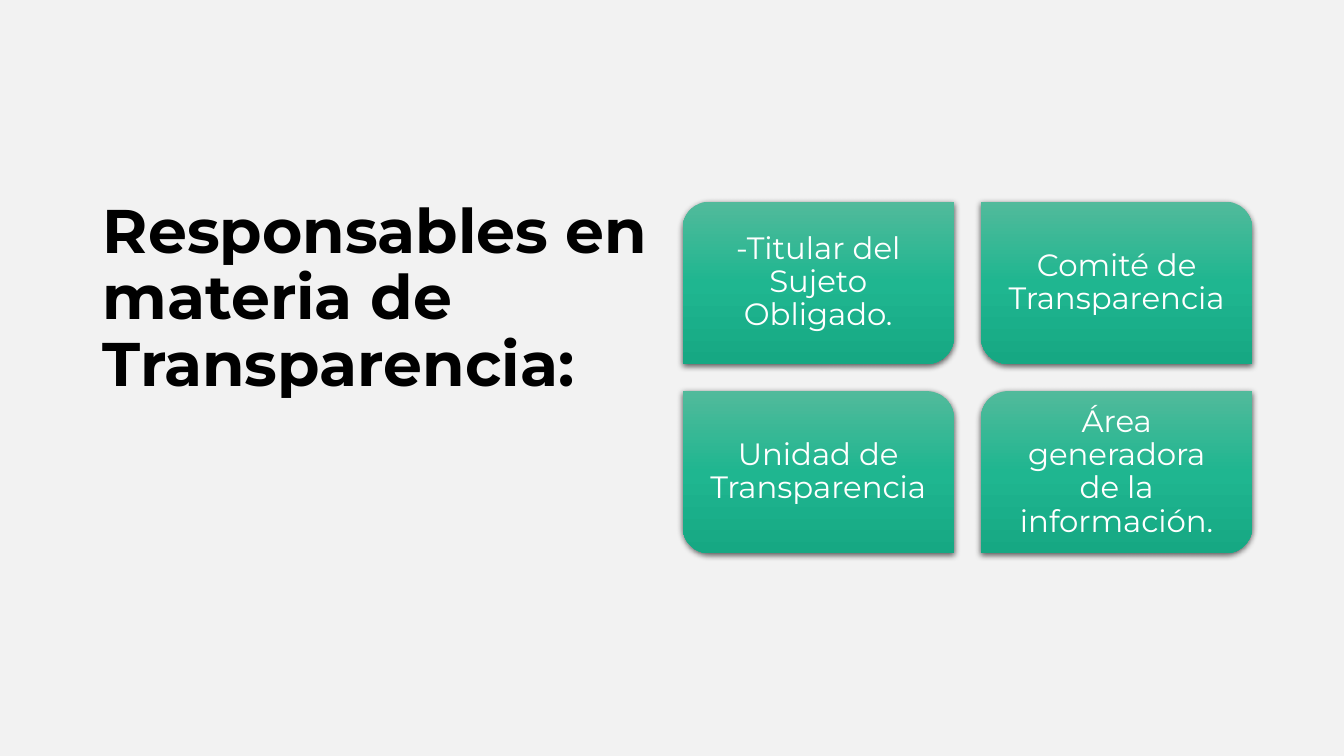
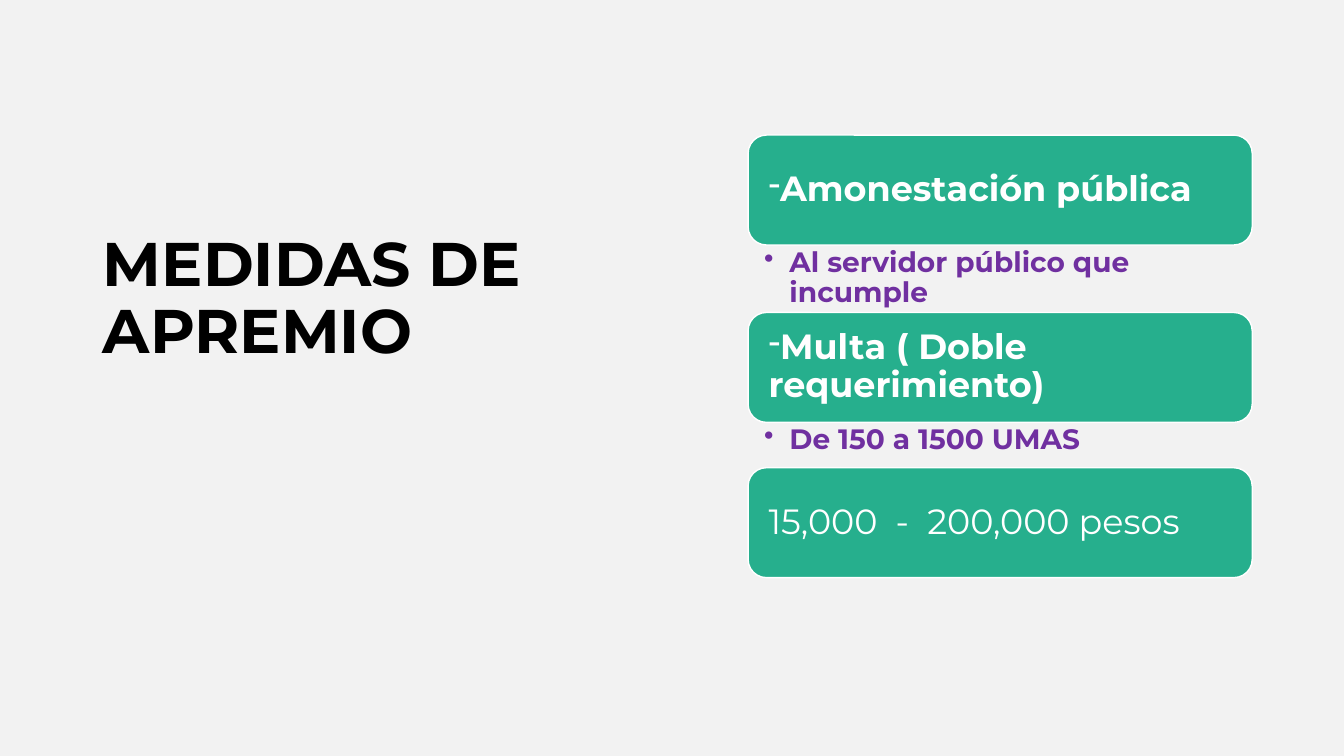
import dataclasses

import lxml.etree
import pptx
import pptx.dml.color
import pptx.enum.shapes
import pptx.enum.text
import pptx.oxml.ns
import pptx.util

Inches = pptx.util.Inches
ALIGN = pptx.enum.text.PP_ALIGN
ANCHOR = pptx.enum.text.MSO_ANCHOR
SHAPE = pptx.enum.shapes.MSO_SHAPE
qn = pptx.oxml.ns.qn


@dataclasses.dataclass(frozen=True)
class Theme:
    font: str = "Montserrat"
    back: str = "F2F2F2"
    ink: str = "000000"
    white: str = "FFFFFF"
    green: str = "26AF8D"
    note: str = "7030A0"
    fade: tuple = ((0, "51BA9B"), (50, "1FB690"), (100, "16A883"))
    title_size: int = 44
    tile_size: int = 22
    card_size: int = 25
    note_size: int = 20
    leading: float = 0.9


@dataclasses.dataclass(frozen=True)
class Box:
    left: float
    top: float
    width: float
    height: float

    def place(self):
        return [Inches(n) for n in (self.left, self.top, self.width, self.height)]


THEME = Theme()
TITLE_BOX = Box(0.92, 1.89, 5.65, 2.17)


def rgb(code):
    return pptx.dml.color.RGBColor.from_string(code)


# Text
def write(shape, text, size, color, bold=False, align=ALIGN.LEFT,
          anchor=ANCHOR.MIDDLE, inset=(0.1, 0.05, 0.1, 0.05), bullet=None, hang=0):
    frame = shape.text_frame
    frame.word_wrap = True
    frame.auto_size = pptx.enum.text.MSO_AUTO_SIZE.NONE
    frame.vertical_anchor = anchor
    (frame.margin_left, frame.margin_top,
     frame.margin_right, frame.margin_bottom) = [Inches(n) for n in inset]
    para = frame.paragraphs[0]
    para.alignment = align
    para.line_spacing = THEME.leading
    if bullet:
        props = para._p.get_or_add_pPr()
        props.set("marL", str(Inches(hang)))
        props.set("indent", str(-Inches(hang)))
        lxml.etree.SubElement(props, qn("a:buChar"), char=bullet)
    run = para.add_run()
    run.text = text
    run.font.name = THEME.font
    run.font.size = pptx.util.Pt(size)
    run.font.bold = bold
    run.font.color.rgb = rgb(color)


# Gradient and shadow of a tile
def tint(parent, code):
    return lxml.etree.SubElement(parent, qn("a:srgbClr"), val=code)


def fade(shape):
    grad = lxml.etree.Element(qn("a:gradFill"), rotWithShape="1")
    stops = lxml.etree.SubElement(grad, qn("a:gsLst"))
    for point, code in THEME.fade:
        tint(lxml.etree.SubElement(stops, qn("a:gs"), pos=str(point * 1000)), code)
    lxml.etree.SubElement(grad, qn("a:lin"), ang="5400000", scaled="0")
    shape._element.spPr.find(qn("a:prstGeom")).addnext(grad)


def shade(shape):
    shape.shadow.inherit = False
    effects = shape._element.spPr.find(qn("a:effectLst"))
    outer = lxml.etree.SubElement(
        effects, qn("a:outerShdw"), blurRad=str(pptx.util.Pt(4.5)),
        dist=str(pptx.util.Pt(1.5)), dir="5400000", algn="ctr", rotWithShape="0")
    lxml.etree.SubElement(tint(outer, THEME.ink), qn("a:alpha"), val="63000")


# Slide with its title
def start(deck, title):
    slide = deck.slides.add_slide(deck.slide_layouts[5])
    head = slide.shapes.title
    head.left, head.top, head.width, head.height = TITLE_BOX.place()
    write(head, title, THEME.title_size, THEME.ink, bold=True)
    return slide


# Two-column grid of tiles, round corners facing outward in turn
def tile_grid(slide, box, names, gap=0.27):
    wide = (box.width - gap) / 2
    high = (box.height - gap) / 2
    for index, name in enumerate(names):
        row, col = divmod(index, 2)
        spot = Box(box.left + col * (wide + gap), box.top + row * (high + gap), wide, high)
        tile = slide.shapes.add_shape(SHAPE.ROUND_2_DIAG_RECTANGLE, *spot.place())
        corners = (0.1667, 0) if row == col else (0, 0.1667)
        tile.adjustments[0], tile.adjustments[1] = corners
        tile.line.fill.background()
        fade(tile)
        shade(tile)
        write(tile, name, THEME.tile_size, THEME.white, align=ALIGN.CENTER, inset=(0.17,) * 4)


# Stack of cards, each with an optional note below
def card_stack(slide, box, items, high=1.09):
    top = box.top
    for text, bold, bullet, note, space in items:
        spot = Box(box.left, top, box.width, high)
        card = slide.shapes.add_shape(SHAPE.ROUNDED_RECTANGLE, *spot.place())
        card.shadow.inherit = False
        card.fill.solid()
        card.fill.fore_color.rgb = rgb(THEME.green)
        card.line.color.rgb = rgb(THEME.white)
        card.line.width = pptx.util.Pt(1)
        write(card, text, THEME.card_size, THEME.white, bold=bold,
              inset=(0.15,) * 4, bullet=bullet)
        top += high
        if note:
            label = slide.shapes.add_textbox(*Box(box.left, top, box.width, space).place())
            write(label, note, THEME.note_size, THEME.note, bold=True, anchor=ANCHOR.TOP,
                  inset=(0.16, 0.03, 0.19, 0.03), bullet="•", hang=0.25)
            top += space


def main():
    deck = pptx.Presentation()
    deck.slide_width, deck.slide_height = Inches(13.33), Inches(7.5)
    back = deck.slide_master.background.fill
    back.solid()
    back.fore_color.rgb = rgb(THEME.back)

    slide = start(deck, "Responsables en materia de Transparencia:")
    tile_grid(slide, Box(6.77, 2, 5.65, 3.49), [
        "-Titular del Sujeto Obligado.",
        "Comité de Transparencia",
        "Unidad de Transparencia",
        "Área generadora de la información.",
    ])

    slide = start(deck, "MEDIDAS DE APREMIO")
    card_stack(slide, Box(7.42, 1.34, 5, 4.39), [
        ("Amonestación pública", True, "-", "Al servidor público que incumple", 0.67),
        ("Multa ( Doble requerimiento)", True, "-", "De 150 a 1500 UMAS", 0.45),
        ("15,000  -  200,000 pesos", False, None, None, 0),
    ])
    deck.save("out.pptx")


if __name__ == "__main__":
    main()
